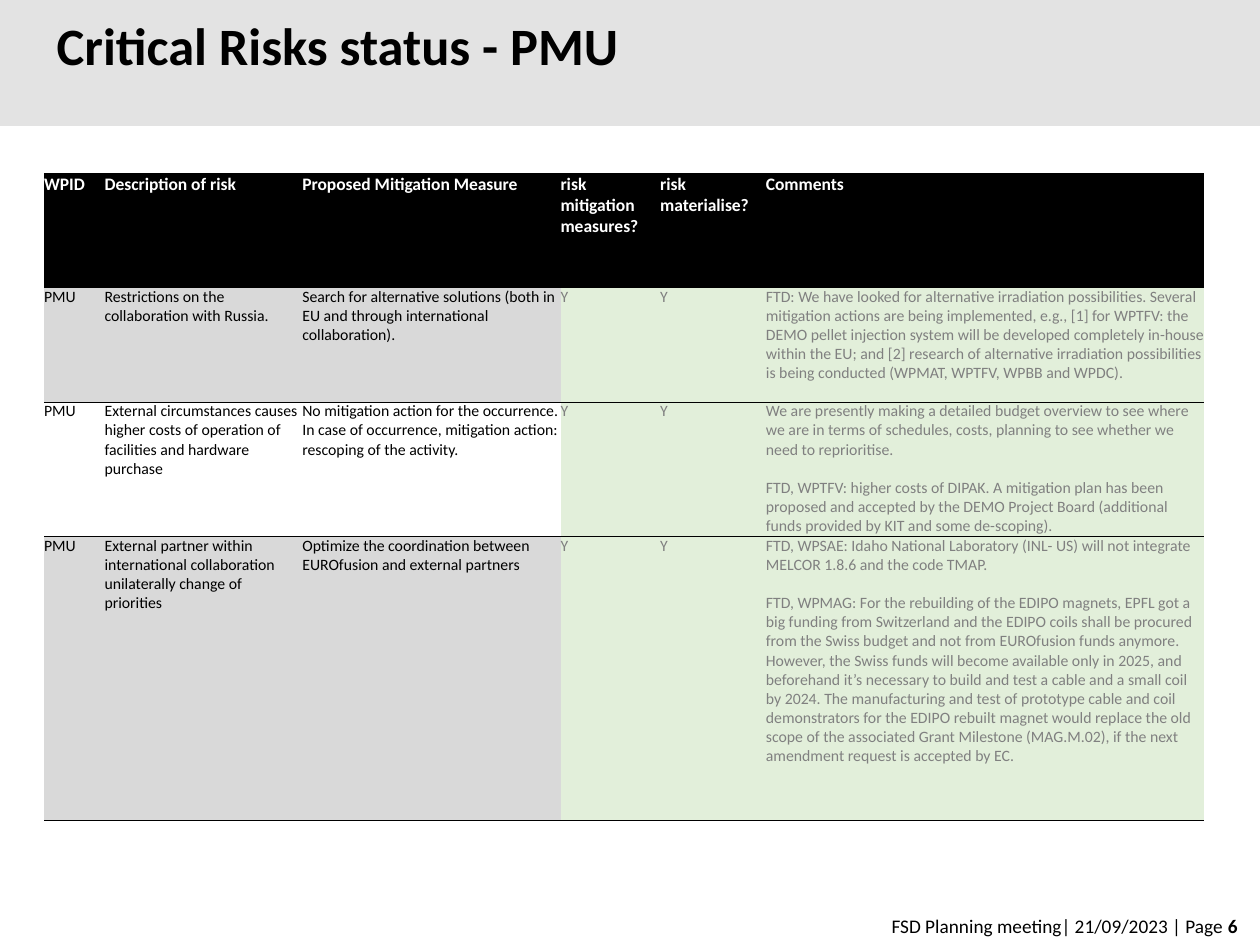
from lxml.etree import SubElement
from pptx import Presentation
from pptx.dml.color import RGBColor
from pptx.enum.shapes import MSO_SHAPE
from pptx.enum.text import MSO_ANCHOR, PP_ALIGN
from pptx.oxml.ns import qn
from pptx.util import Inches, Pt

BLACK = RGBColor(0x00, 0x00, 0x00)
WHITE = RGBColor(0xFF, 0xFF, 0xFF)
BAND_GRAY = RGBColor(0xE3, 0xE3, 0xE3)
ROW_GRAY = RGBColor(0xD9, 0xD9, 0xD9)
STATUS_GREEN = RGBColor(0xE2, 0xEF, 0xDA)
STATUS_GRAY = RGBColor(0x80, 0x80, 0x80)

FONT = "Calibri"
COLUMN_WIDTHS = (0.48, 1.57, 2.05, 0.79, 0.84, 3.48)
ROW_HEIGHTS = (0.9, 0.91, 1.06, 2.26)
FIRST_STATUS_COLUMN = 3
HEADINGS = ("WPID", "Description of risk", "Proposed Mitigation Measure",
            "risk mitigation measures?", "risk materialise?", "Comments")
RISKS = (
    ("PMU", "Restrictions on the collaboration with Russia.",
     "Search for alternative solutions (both in EU and through international collaboration).",
     "Y", "Y",
     "FTD: We have looked for alternative irradiation possibilities. Several mitigation "
     "actions are being implemented, e.g., [1] for WPTFV: the DEMO pellet injection system "
     "will be developed completely in-house within the EU; and [2] research of alternative "
     "irradiation possibilities is being conducted (WPMAT, WPTFV, WPBB and WPDC)."),
    ("PMU", "External circumstances causes higher costs of operation of facilities and "
     "hardware purchase",
     "No mitigation action for the occurrence.\n"
     "In case of occurrence, mitigation action: rescoping of the activity.",
     "Y", "Y",
     "We are presently making a detailed budget overview to see where we are in terms of "
     "schedules, costs, planning to see whether we need to reprioritise.\n"
     "FTD, WPTFV: higher costs of DIPAK. A mitigation plan has been proposed and accepted by "
     "the DEMO Project Board (additional funds provided by KIT and some de-scoping)."),
    ("PMU", "External partner within international collaboration unilaterally change of "
     "priorities",
     "Optimize the coordination between EUROfusion and external partners",
     "Y", "Y",
     "FTD, WPSAE: Idaho National Laboratory (INL- US) will not integrate MELCOR 1.8.6 and "
     "the code TMAP.\n"
     "FTD, WPMAG: For the rebuilding of the EDIPO magnets, EPFL got a big funding from "
     "Switzerland and the EDIPO coils shall be procured from the Swiss budget and not from "
     "EUROfusion funds anymore. However, the Swiss funds will become available only in 2025, "
     "and beforehand it’s necessary to build and test a cable and a small coil by 2024. The "
     "manufacturing and test of prototype cable and coil demonstrators for the EDIPO rebuilt "
     "magnet would replace the old scope of the associated Grant Milestone (MAG.M.02), if the "
     "next amendment request is accepted by EC."),
)


def add_span(para, text, size=9, color=BLACK, bold=False):
    """Append formatted text to a paragraph."""
    span = para.add_run()
    span.text = text
    span.font.name = FONT
    span.font.size = Pt(size)
    span.font.bold = bold
    span.font.color.rgb = color


def write_paragraphs(frame, text, gap=0, **style):
    """Fill a text frame with one paragraph per line, separated by a gap."""
    for index, line in enumerate(text.split("\n")):
        para = frame.paragraphs[0] if index == 0 else frame.add_paragraph()
        if index:
            para.space_before = Pt(gap)
        add_span(para, line, **style)


def set_borders(cell):
    """Draw thin black rules above and below a cell and none at its sides."""
    properties = cell._tc.get_or_add_tcPr()
    for side in ("L", "R", "T", "B"):
        line = SubElement(properties, qn(f"a:ln{side}"), w=str(Pt(0.5)))
        if side in "LR":
            SubElement(line, qn("a:noFill"))
        else:
            fill = SubElement(line, qn("a:solidFill"))
            SubElement(fill, qn("a:srgbClr"), val=str(BLACK))


def fill_cell(cell, text, fill=None, **style):
    """Write a cell without margins, with its borders and fill."""
    cell.margin_left = cell.margin_right = cell.margin_top = cell.margin_bottom = 0
    set_borders(cell)
    if fill is None:
        cell.fill.background()
    else:
        cell.fill.solid()
        cell.fill.fore_color.rgb = fill
    write_paragraphs(cell.text_frame, text, **style)


def add_header(page, left, top, width, height):
    """Place the gray band and the title over it."""
    band = page.shapes.add_shape(MSO_SHAPE.RECTANGLE, left, top, width, height)
    band.shadow.inherit = False
    band.fill.solid()
    band.fill.fore_color.rgb = BAND_GRAY
    band.line.fill.background()
    page.shapes._spTree.insert(2, band._element)

    title = page.shapes.title
    title.left, title.top = left + Inches(0.35), top - Inches(0.12)
    title.width, title.height = Inches(8.74), height
    frame = title.text_frame
    frame.vertical_anchor = MSO_ANCHOR.MIDDLE
    write_paragraphs(frame, "Critical Risks status - PMU", size=30, bold=True)
    frame.paragraphs[0].alignment = PP_ALIGN.LEFT
    frame.paragraphs[0].line_spacing = Pt(32)


def add_risk_table(page, left, top, width, height):
    """Place the risk table with its heading row and status columns."""
    table = page.shapes.add_table(len(ROW_HEIGHTS), len(COLUMN_WIDTHS),
                                  left, top, width, height).table
    table.first_row = table.horz_banding = False
    for column, size in zip(table.columns, COLUMN_WIDTHS):
        column.width = Inches(size)
    for row, size in zip(table.rows, ROW_HEIGHTS):
        row.height = Inches(size)
    for column, heading in enumerate(HEADINGS):
        fill_cell(table.cell(0, column), heading, BLACK, size=10, color=WHITE, bold=True)
    for row, risk in enumerate(RISKS, start=1):
        for column, text in enumerate(risk):
            status = column >= FIRST_STATUS_COLUMN
            row_fill = ROW_GRAY if row % 2 else None
            fill_cell(table.cell(row, column), text,
                      STATUS_GREEN if status else row_fill,
                      color=STATUS_GRAY if status else BLACK,
                      gap=11 if status else 0)


def add_footer(page, left, top, width, height):
    """Place the right-aligned meeting name, date and page number."""
    frame = page.shapes.add_textbox(left, top, width, height).text_frame
    frame.word_wrap = True
    para = frame.paragraphs[0]
    para.alignment = PP_ALIGN.RIGHT
    add_span(para, "FSD Planning meeting| 21/09/2023 | Page ", size=11)
    add_span(para, "6", size=11, bold=True)


def main():
    """Build and save the deck."""
    deck = Presentation()
    deck.slide_width, deck.slide_height = Inches(10), Inches(7.5)
    page = deck.slides.add_slide(deck.slide_layouts[5])
    add_header(page, 0, 0, deck.slide_width, Inches(1))
    add_risk_table(page, Inches(0.35), Inches(1.38),
                   Inches(sum(COLUMN_WIDTHS)), Inches(sum(ROW_HEIGHTS)))
    add_footer(page, Inches(0.91), Inches(7.21), Inches(9.01), Inches(0.29))
    deck.save("out.pptx")


if __name__ == "__main__":
    main()
